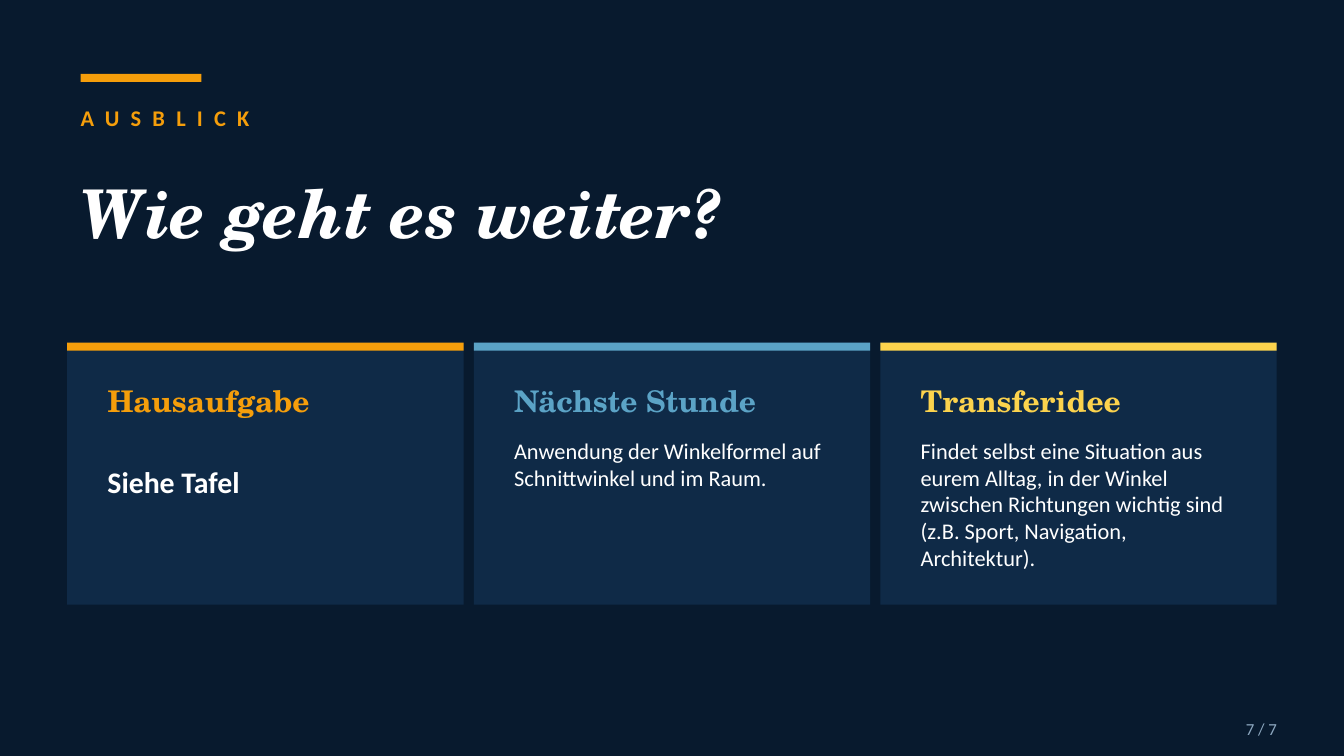
from pptx import Presentation
from pptx.dml.color import RGBColor
from pptx.enum.shapes import MSO_SHAPE
from pptx.enum.text import MSO_ANCHOR, MSO_AUTO_SIZE, PP_ALIGN
from pptx.util import Emu, Pt

RECTANGLE = MSO_SHAPE.RECTANGLE
TOP, MIDDLE = MSO_ANCHOR.TOP, MSO_ANCHOR.MIDDLE
LEFT, RIGHT = PP_ALIGN.LEFT, PP_ALIGN.RIGHT
NO_AUTOFIT = MSO_AUTO_SIZE.NONE

EMU_PER_PX = 4572  # 200 px to the inch
SANS, SERIF = "Calibri", "TeX Gyre Schola"
NIGHT, NAVY, WHITE, GREY = "081A2E", "0F2A47", "FFFFFF", "8DA8C0"
ORANGE, BLUE, YELLOW = "F59E0B", "5BA3C6", "FCD34D"

CARD_LEFT, CARD_TOP, CARD_WIDTH, CARD_HEIGHT = 100, 510, 590, 390
CARD_STEP = 605
CARD_PADDING = 60
BAR_HEIGHT = 12


def px(value):
    return Emu(value * EMU_PER_PX)


def color(hex_string):
    return RGBColor.from_string(hex_string)


def add_rectangle(slide, left, top, width, height, fill):
    shape = slide.shapes.add_shape(RECTANGLE, px(left), px(top), px(width), px(height))
    shape.shadow.inherit = False
    shape.fill.solid()
    shape.fill.fore_color.rgb = color(fill)
    shape.line.fill.background()


def write_text(shape, text, size, fill, font_name=SANS, bold=False, italic=False,
               anchor=MIDDLE, align=LEFT, side_margin=0):
    """Put one formatted paragraph into a shape and return the paragraph."""
    frame = shape.text_frame
    frame.word_wrap = True
    frame.auto_size = NO_AUTOFIT
    frame.vertical_anchor = anchor
    frame.margin_left = frame.margin_right = px(side_margin)
    frame.margin_top = frame.margin_bottom = 0
    paragraph = frame.paragraphs[0]
    paragraph.text = text
    paragraph.alignment = align
    font = paragraph.font
    font.name, font.size = font_name, Pt(size)
    font.bold, font.italic = bold, italic
    font.color.rgb = color(fill)
    return paragraph


def add_text(slide, left, top, width, height, text, size, fill, **style):
    box = slide.shapes.add_textbox(px(left), px(top), px(width), px(height))
    return write_text(box, text, size, fill, **style)


def add_title(slide, text):
    title = slide.shapes.title
    title.left, title.top, title.width, title.height = px(120), px(230), px(1800), px(170)
    write_text(title, text, 36, WHITE, font_name=SERIF, bold=True, italic=True)


def add_kicker(slide, text):
    """Add the accent bar and the letter-spaced line above the title."""
    add_rectangle(slide, 120, 110, 180, BAR_HEIGHT, ORANGE)
    paragraph = add_text(slide, 120, 140, 1800, 70, text, 12, ORANGE, bold=True)
    paragraph.runs[0].font._element.set("spc", "600")


def add_card(slide, left, heading, accent):
    add_rectangle(slide, left, CARD_TOP, CARD_WIDTH, CARD_HEIGHT, NAVY)
    add_rectangle(slide, left, CARD_TOP, CARD_WIDTH, BAR_HEIGHT, accent)
    add_text(slide, left + CARD_PADDING, 556, CARD_WIDTH - 2 * CARD_PADDING, 80,
             heading, 16, accent, font_name=SERIF, bold=True)


def add_card_body(slide, left, text, emphasized):
    left += CARD_PADDING
    if emphasized:
        add_text(slide, left, 690, 528, 98, text, 16, WHITE, bold=True, anchor=TOP)
    else:
        add_text(slide, left, 650, 470, 230, text, 12, WHITE, anchor=TOP)


def main():
    presentation = Presentation()
    presentation.slide_width, presentation.slide_height = px(2000), px(1125)
    slide = presentation.slides.add_slide(presentation.slide_layouts[5])
    slide.background.fill.solid()
    slide.background.fill.fore_color.rgb = color(NIGHT)

    add_kicker(slide, "AUSBLICK")
    add_title(slide, "Wie geht es weiter?")

    cards = [
        ("Hausaufgabe", ORANGE, "Siehe Tafel", True),
        ("Nächste Stunde", BLUE,
         "Anwendung der Winkelformel auf Schnittwinkel und im Raum.", False),
        ("Transferidee", YELLOW,
         "Findet selbst eine Situation aus eurem Alltag, in der Winkel zwischen "
         "Richtungen wichtig sind (z.B. Sport, Navigation, Architektur).", False),
    ]
    for index, (heading, accent, body, emphasized) in enumerate(cards):
        left = CARD_LEFT + index * CARD_STEP
        add_card(slide, left, heading, accent)
        add_card_body(slide, left, body, emphasized)

    add_text(slide, 1760, 1060, 160, 50, "7 / 7", 9, GREY, align=RIGHT, side_margin=20)
    presentation.save("out.pptx")


if __name__ == "__main__":
    main()
